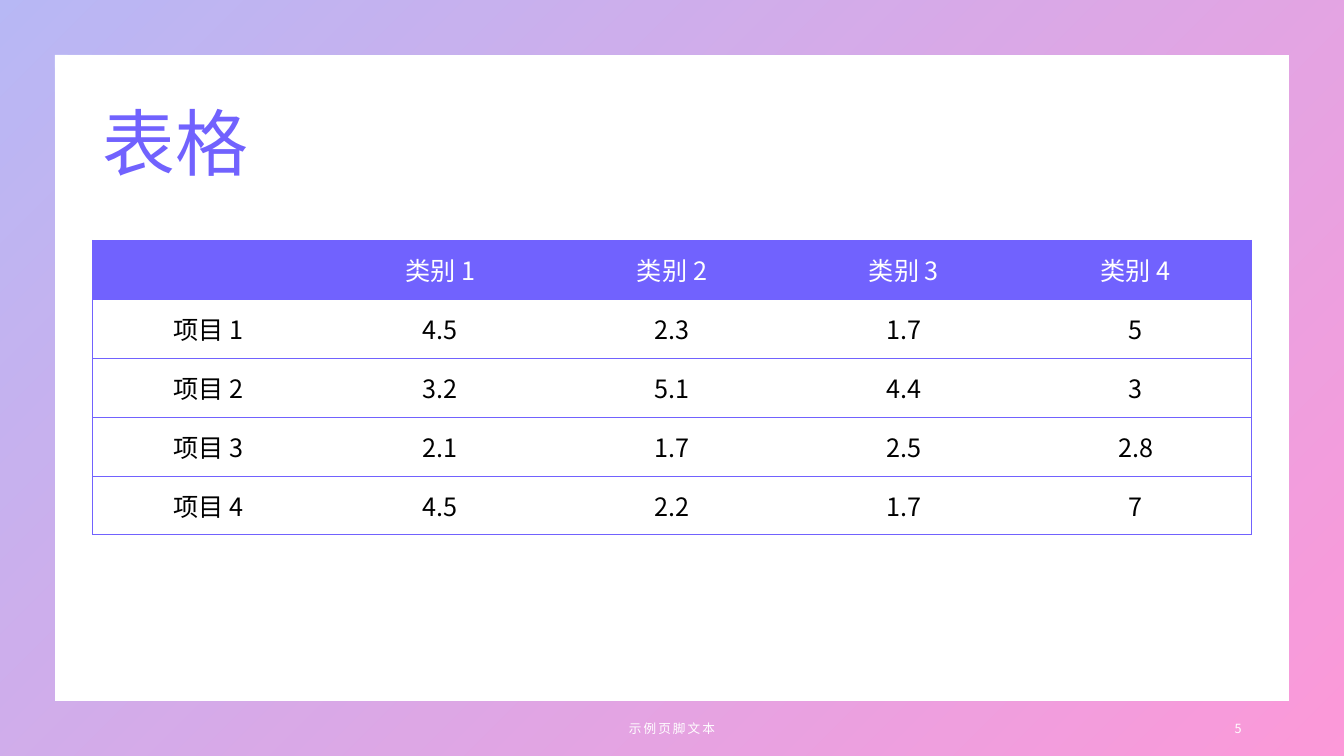
from lxml import etree
from pptx import Presentation
from pptx.dml.color import RGBColor
from pptx.enum import shapes, text
from pptx.oxml.ns import qn
from pptx.util import Pt

TITLE = "表格"
FOOTER = "示例页脚文本"
PAGE_NUMBER = "5"
ROWS = [
    ["", "类别 1", "类别 2", "类别 3", "类别 4"],
    ["项目 1", "4.5", "2.3", "1.7", "5"],
    ["项目 2", "3.2", "5.1", "4.4", "3"],
    ["项目 3", "2.1", "1.7", "2.5", "2.8"],
    ["项目 4", "4.5", "2.2", "1.7", "7"],
]
FONT = "Noto Sans CJK SC"
PURPLE, PINK, BLUE = "7162FE", "F900A0", "4D4EE6"
WHITE, BLACK = "FFFFFF", "000000"
WIDTH, HEIGHT = 960, 540
LEFT, CONTENT_WIDTH = 66, 828
TABLE_TOP, ROW_HEIGHT = 171.5, 42.1
FOOTER_TOP, FOOTER_HEIGHT = 506, 29
NO_STYLE = "{2D5ABB26-0587-4C30-8999-92F81FD0307C}"


def color(value):
    return RGBColor.from_string(value)


def write(frame, content, size, fill, align=text.PP_ALIGN.CENTER, spacing=0, line_spacing=None):
    frame.word_wrap = True
    frame.vertical_anchor = text.MSO_ANCHOR.MIDDLE
    paragraph = frame.paragraphs[0]
    paragraph.alignment = align
    paragraph.line_spacing = line_spacing
    run = paragraph.add_run()
    run.text = content
    run.font.size = Pt(size)
    run.font.name = FONT
    run.font.color.rgb = color(fill)
    properties = run.font._element
    etree.SubElement(properties, qn("a:ea"), typeface=FONT)
    if spacing:
        properties.set("spc", str(round(spacing * 100)))


def add_borders(cell, sides):
    """Draw thin purple lines on the given sides, listed in the order L, R, T, B."""
    properties = cell._tc.get_or_add_tcPr()
    for index, side in enumerate(sides):
        line = etree.Element(qn("a:ln" + side), w=str(Pt(0.5)))
        fill = etree.SubElement(line, qn("a:solidFill"))
        etree.SubElement(fill, qn("a:srgbClr"), val=PURPLE)
        properties.insert(index, line)


def add_frame(slide):
    frame = slide.shapes.add_shape(shapes.MSO_SHAPE.FRAME, 0, 0, Pt(WIDTH), Pt(HEIGHT))
    frame.adjustments[0] = 0.072
    frame.shadow.inherit = False
    frame.line.fill.background()
    frame.fill.gradient()
    frame.fill.gradient_angle = 315
    for stop, position, value in zip(frame.fill.gradient_stops, (0, 1), (BLUE, PINK)):
        stop.position = position
        stop.color.rgb = color(value)
    for stop_color in frame._element.spPr.iter(qn("a:srgbClr")):
        etree.SubElement(stop_color, qn("a:alpha"), val="40000")


def add_title(slide):
    title = slide.shapes.title
    title.left, title.top = Pt(LEFT), Pt(53)
    title.width, title.height = Pt(CONTENT_WIDTH), Pt(104.5)
    write(title.text_frame, TITLE, 52, PURPLE, align=text.PP_ALIGN.LEFT, line_spacing=0.9)


def add_table(slide):
    row_count, column_count = len(ROWS), len(ROWS[0])
    table = slide.shapes.add_table(
        row_count, column_count, Pt(LEFT), Pt(TABLE_TOP),
        Pt(CONTENT_WIDTH), Pt(ROW_HEIGHT * row_count)).table
    table._tbl.tblPr.find(qn("a:tableStyleId")).text = NO_STYLE
    table.horz_banding = False
    for row, values in enumerate(ROWS):
        table.rows[row].height = Pt(ROW_HEIGHT)
        for column, value in enumerate(values):
            cell = table.cell(row, column)
            cell.vertical_anchor = text.MSO_ANCHOR.MIDDLE
            if row == 0:
                cell.fill.solid()
                cell.fill.fore_color.rgb = color(PURPLE)
            else:
                cell.fill.background()
            if value:
                write(cell.text_frame, value, 18, BLACK if row else WHITE)
            left = "L" if column == 0 else ""
            right = "R" if column == column_count - 1 else ""
            add_borders(cell, left + right + "TB")


def add_footer(slide, content, left, width, align):
    box = slide.shapes.add_textbox(Pt(left), Pt(FOOTER_TOP), Pt(width), Pt(FOOTER_HEIGHT))
    write(box.text_frame, content, 9, WHITE, align=align, spacing=1.5)


def main():
    presentation = Presentation()
    presentation.slide_width, presentation.slide_height = Pt(WIDTH), Pt(HEIGHT)
    slide = presentation.slides.add_slide(presentation.slide_layouts[5])
    slide.background.fill.solid()
    slide.background.fill.fore_color.rgb = color(WHITE)
    add_frame(slide)
    add_title(slide)
    add_table(slide)
    add_footer(slide, FOOTER, (WIDTH - 324) / 2, 324, text.PP_ALIGN.CENTER)
    add_footer(slide, PAGE_NUMBER, LEFT + CONTENT_WIDTH - 216, 216, text.PP_ALIGN.RIGHT)
    presentation.save("out.pptx")


if __name__ == "__main__":
    main()
